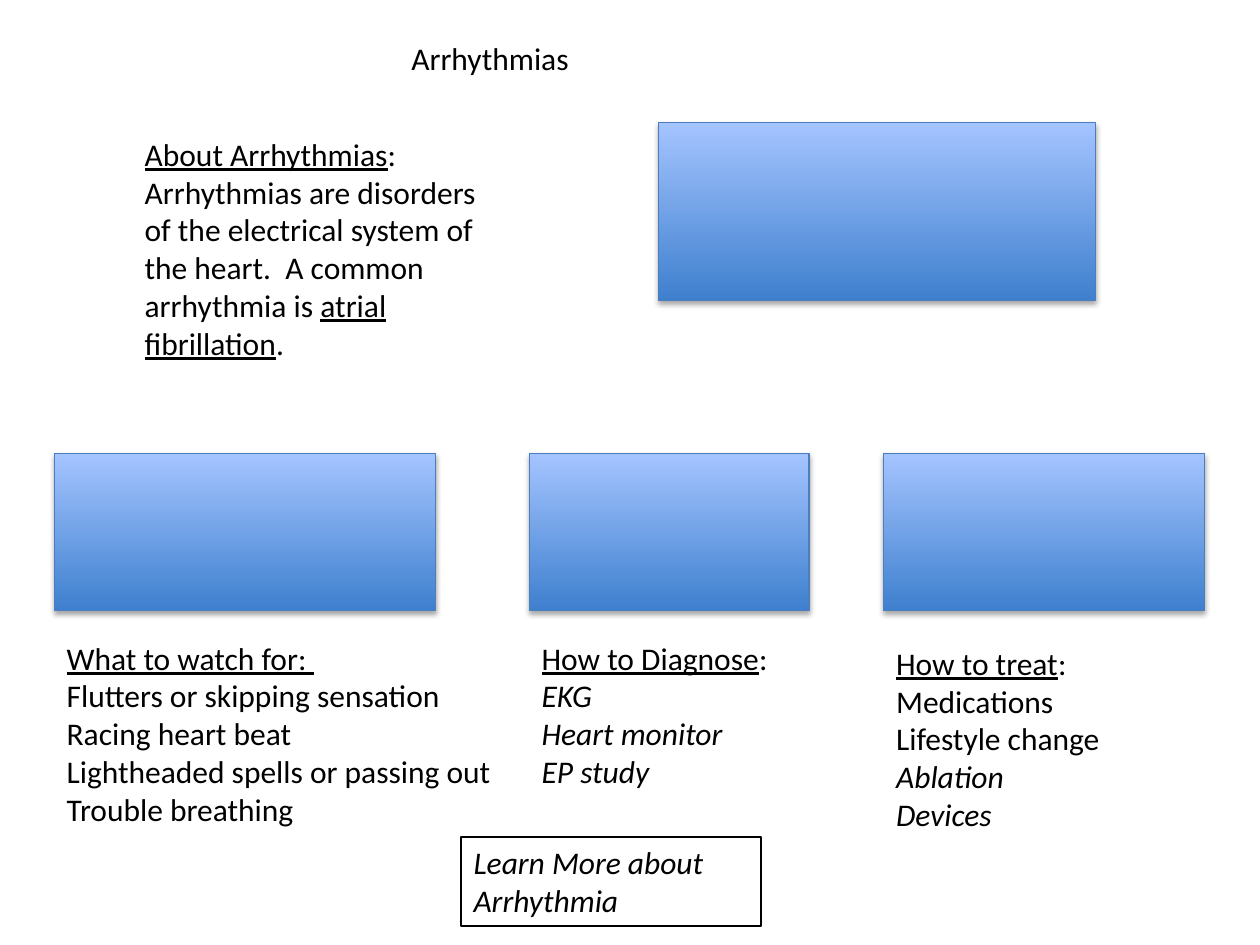
"""Build the one-slide Arrhythmias overview with its text panels and gradient blocks."""
from dataclasses import dataclass

from lxml.etree import SubElement
from pptx import Presentation
from pptx.dml.color import RGBColor
from pptx.enum.shapes import MSO_SHAPE
from pptx.enum.text import MSO_AUTO_SIZE
from pptx.oxml.ns import qn
from pptx.util import Pt


@dataclass(frozen=True)
class Theme:
    font: str = "Calibri"
    body_size: float = 18
    ink: RGBColor = RGBColor(0, 0, 0)
    block_bottom: RGBColor = RGBColor(0x3F, 0x80, 0xCE)
    block_top: RGBColor = RGBColor(0xA4, 0xC4, 0xFF)
    block_edge: RGBColor = RGBColor(0x4B, 0x7E, 0xBC)
    edge_width: float = 0.75


theme = Theme()
presentation = Presentation()
presentation.slide_width, presentation.slide_height = Pt(720), Pt(540)
slide = presentation.slides.add_slide(presentation.slide_layouts[6])


def add_text(paragraphs, *, left, top, width, height, border=None):
    """Add a text box; each paragraph lists (text, style) runs, "u" underlined and "i" italic."""
    box = slide.shapes.add_textbox(Pt(left), Pt(top), Pt(width), Pt(height))
    frame = box.text_frame
    frame.word_wrap = True
    frame.auto_size = MSO_AUTO_SIZE.SHAPE_TO_FIT_TEXT
    if border is not None:
        box.line.color.rgb = border
        box.line.width = Pt(theme.edge_width)
    for index, runs in enumerate(paragraphs):
        paragraph = frame.add_paragraph() if index else frame.paragraphs[0]
        for text, style in runs:
            run = paragraph.add_run()
            run.text = text
            run.font.name = theme.font
            run.font.size = Pt(theme.body_size)
            run.font.color.rgb = theme.ink
            run.font.underline = "u" in style
            run.font.italic = "i" in style


def add_block(left, top, width, height):
    """Add a blue gradient rectangle with a soft shadow below it."""
    block = slide.shapes.add_shape(
        MSO_SHAPE.RECTANGLE, Pt(left), Pt(top), Pt(width), Pt(height))
    block.fill.gradient()
    block.fill.gradient_angle = 90
    for stop, color in zip(block.fill.gradient_stops, (theme.block_bottom, theme.block_top)):
        stop.color.rgb = color
    block.line.color.rgb = theme.block_edge
    block.line.width = Pt(theme.edge_width)
    block.shadow.inherit = False
    effects = block._element.spPr.find(qn("a:effectLst"))
    shadow = SubElement(effects, qn("a:outerShdw"), blurRad=str(Pt(3.1)),
                        dist=str(Pt(1.8)), dir="5400000", rotWithShape="0")
    shade = SubElement(shadow, qn("a:srgbClr"), val=str(theme.ink))
    SubElement(shade, qn("a:alpha"), val="35000")


add_text([[("Arrhythmias", "")]], left=228, top=18.72, width=166.5, height=29)

about = [
    [("About Arrhythmias", "u"), (":", "")],
    [("Arrhythmias are disorders of the electrical system of the heart.  "
      "A common arrhythmia is ", ""), ("atrial fibrillation", "u"), (".", "")],
]
add_text(about, left=75.6, top=73.44, width=213, height=138.2)
add_block(376.5, 69.9, 249.5, 101.8)

columns = [
    (31, 218, 283, 361.4, [("What to watch for: ", "u")],
     [("Flutters or skipping sensation", ""), ("Racing heart beat", ""),
      ("Lightheaded spells or passing out", ""), ("Trouble breathing", "")]),
    (302.4, 160, 219.6, 361.4, [("How to Diagnose", "u"), (":", "")],
     [("EKG", "i"), ("Heart monitor", "i"), ("EP study", "i")]),
    (505, 183.3, 166.3, 364.3, [("How to treat", "u"), (":", "")],
     [("Medications", ""), ("Lifestyle change", ""), ("Ablation", "i"), ("Devices", "i")]),
]
for left, block_width, text_width, text_top, heading, items in columns:
    add_block(left, 259.2, block_width, 89.6)
    add_text([heading] + [[item] for item in items], left=left, top=text_top,
             width=text_width, height=7.2 + 21.8 * (len(items) + 1))

add_text([[("Learn More about Arrhythmia", "i")]], left=263.5, top=478.3,
         width=171.4, height=50.9, border=theme.ink)

presentation.save("out.pptx")
